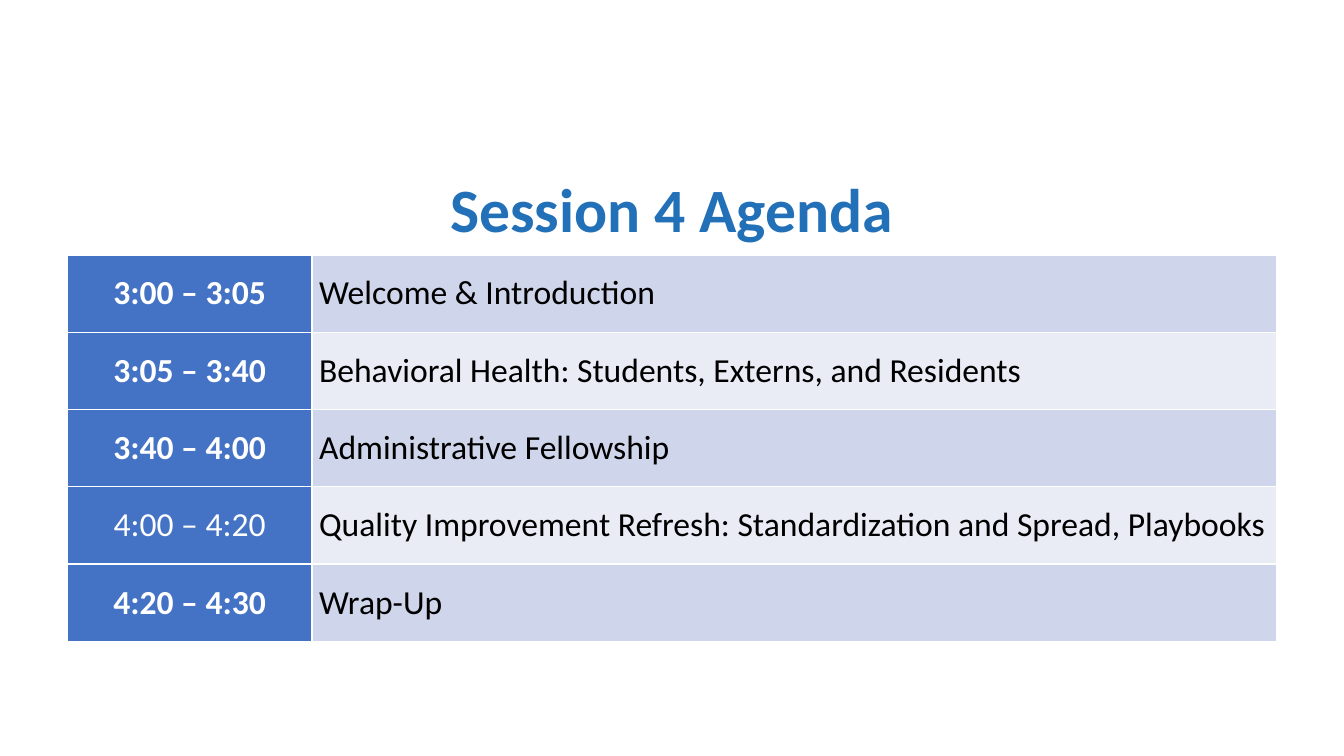
from lxml.etree import SubElement
from pptx import Presentation
from pptx.dml.color import RGBColor
from pptx.enum.text import MSO_ANCHOR, PP_ALIGN
from pptx.oxml.ns import qn
from pptx.util import Inches, Pt

AGENDA = [
    ("3:00 – 3:05", "Welcome & Introduction", True),
    ("3:05 – 3:40", "Behavioral Health: Students, Externs, and Residents", True),
    ("3:40 – 4:00", "Administrative Fellowship", True),
    ("4:00 – 4:20", "Quality Improvement Refresh: Standardization and Spread, Playbooks", False),
    ("4:20 – 4:30", "Wrap-Up", True),
]


def rgb(value):
    """Turn a hex string into a colour."""
    return RGBColor.from_string(value)


def write(tf, text, size=24, color="000000", bold=False, align=PP_ALIGN.LEFT, spacing=1.0):
    """Put one formatted paragraph into a text frame."""
    p = tf.paragraphs[0]
    p.alignment, p.line_spacing = align, spacing
    r = p.add_run()
    r.text = text
    r.font.name, r.font.size, r.font.bold = "Calibri", Pt(size), bold
    r.font.color.rgb = rgb(color)


class Deck:
    """Hold the style, the slide and its 160 by 90 grid."""

    TITLE, TIME, BANDS, BORDER = "2270B7", "4472C4", ("CFD5EA", "E9EBF5"), "FFFFFF"

    def __init__(self):
        """Start a widescreen presentation with one title-only slide."""
        self.prs = Presentation()
        self.prs.slide_width, self.prs.slide_height = Inches(13.33), Inches(7.5)
        self.s = self.prs.slides.add_slide(self.prs.slide_layouts[5])

    def col(self, n):
        """Give the length of n grid columns."""
        return round(self.prs.slide_width * n / 160)

    def row(self, n):
        """Give the length of n grid rows."""
        return round(self.prs.slide_height * n / 90)

    def title(self, text, x, y, w, h):
        """Place and format the title placeholder."""
        sp = self.s.shapes.title
        sp.left, sp.top, sp.width, sp.height = self.col(x), self.row(y), self.col(w), self.row(h)
        tf = sp.text_frame
        tf.word_wrap, tf.vertical_anchor = True, MSO_ANCHOR.MIDDLE
        write(tf, text, size=44, color=self.TITLE, bold=True, align=PP_ALIGN.CENTER, spacing=0.9)

    def cell(self, cell, fill, text, **style):
        """Fill, border and write one table cell."""
        cell.margin_left = cell.margin_right = Inches(0.07)
        cell.margin_top = cell.margin_bottom = 0
        cell.vertical_anchor = MSO_ANCHOR.MIDDLE
        tcPr = cell._tc.get_or_add_tcPr()
        for side in ("lnL", "lnR", "lnT", "lnB"):
            ln = SubElement(tcPr, qn(f"a:{side}"), w=str(Pt(1)))
            SubElement(SubElement(ln, qn("a:solidFill")), qn("a:srgbClr"), val=self.BORDER)
        cell.fill.solid()
        cell.fill.fore_color.rgb = rgb(fill)
        write(cell.text_frame, text, **style)

    def agenda(self, items, x, y, widths, row_height):
        """Add the table of times and topics."""
        frame = self.s.shapes.add_table(len(items), len(widths), self.col(x), self.row(y),
                                        self.col(sum(widths)), self.row(row_height * len(items)))
        table = frame.table
        table.first_row, table.first_col, table.horz_banding = False, True, True
        for column, width in zip(table.columns, widths):
            column.width = self.col(width)
        for i, (time, topic, bold) in enumerate(items):
            table.rows[i].height = self.row(row_height)
            self.cell(table.cell(i, 0), self.TIME, time, color="FFFFFF", bold=bold,
                      align=PP_ALIGN.CENTER)
            self.cell(table.cell(i, 1), self.BANDS[i % 2], topic)


def main():
    """Build and save the agenda slide."""
    deck = Deck()
    deck.title("Session 4 Agenda", 11, 20.3, 138, 10)
    deck.agenda(AGENDA, 8, 30.35, (29.15, 114.85), 9.2)
    deck.prs.save("out.pptx")


if __name__ == "__main__":
    main()
